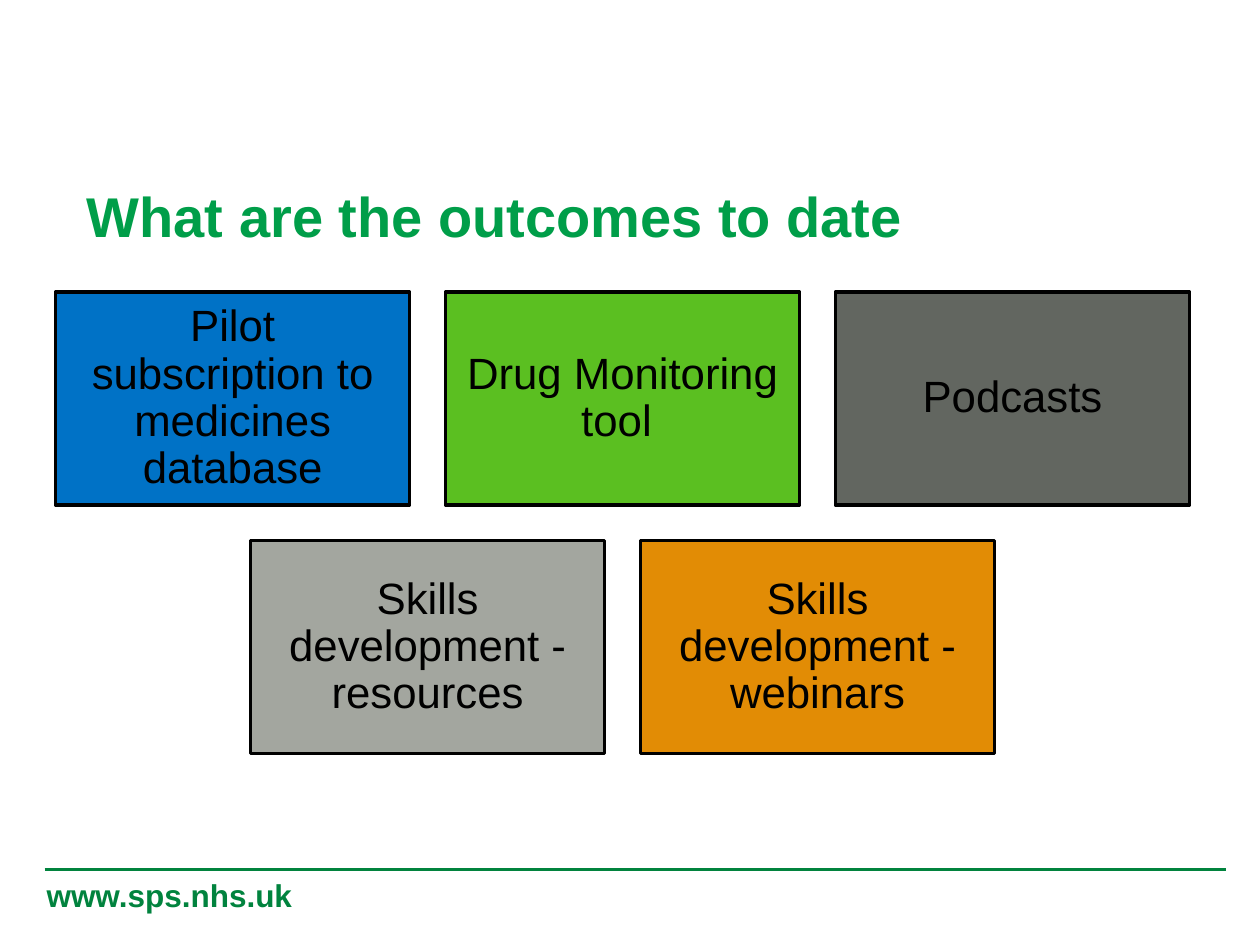
import pptx
import pptx.dml.color
import pptx.enum.shapes
import pptx.enum.text
import pptx.oxml
import pptx.util
from dataclasses import dataclass

Cm = pptx.util.Cm
Pt = pptx.util.Pt
ALIGN = pptx.enum.text.PP_ALIGN
ANCHOR = pptx.enum.text.MSO_ANCHOR


@dataclass(frozen=True)
class Theme:
    """Colours, font and type sizes of the slide."""
    font: str = "Arial"
    title: str = "009E49"
    footer: str = "01833E"
    ink: str = "000000"
    title_size: int = 32
    card_size: int = 25
    footer_size: int = 18


THEME = Theme()
CARD_WIDTH, CARD_HEIGHT, GAP = 7.14, 4.29, 0.72
CARDS_CENTRE, CARDS_TOP = 12.55, 5.89
OUTCOME_ROWS = [
    [("Pilot subscription to medicines database", "0072C6"),
     ("Drug Monitoring tool ", "5BBF21"),
     ("Podcasts", "626660")],
    [("Skills development - resources", "A3A69F"),
     ("Skills development - webinars", "E28C05")],
]


def rgb(value):
    """Turn a hex string into a colour."""
    return pptx.dml.color.RGBColor.from_string(value)


def apply(target, formats):
    """Set every attribute named in a dict of format values."""
    for name, value in formats.items():
        setattr(target, name, value)


def write(shape, text, size, colour, bold=False, align=ALIGN.LEFT,
          anchor=ANCHOR.MIDDLE, spacing=1.0):
    """Put one formatted paragraph into a shape."""
    frame = shape.text_frame
    inset = Cm(0.25)
    apply(frame, {"text": text, "word_wrap": True, "vertical_anchor": anchor,
                  "auto_size": pptx.enum.text.MSO_AUTO_SIZE.NONE,
                  "margin_left": inset, "margin_right": inset})
    paragraph = frame.paragraphs[0]
    apply(paragraph, {"alignment": align, "line_spacing": spacing})
    font = paragraph.runs[0].font
    apply(font, {"name": THEME.font, "size": Pt(size), "bold": bold})
    font.color.rgb = rgb(colour)


def add_title(slide, text):
    """Place and format the title placeholder."""
    title = slide.shapes.title
    apply(title, {"left": Cm(1.5), "top": Cm(3.53),
                  "width": Cm(22.86), "height": Cm(1.63)})
    write(title, text, THEME.title_size, THEME.title, bold=True)


def add_card(slide, left, top, text, fill):
    """Draw one outcome card."""
    card = slide.shapes.add_shape(
        pptx.enum.shapes.MSO_SHAPE.RECTANGLE,
        Cm(left), Cm(top), Cm(CARD_WIDTH), Cm(CARD_HEIGHT))
    card.shadow.inherit = False
    card.fill.solid()
    card.fill.fore_color.rgb = rgb(fill)
    card.line.color.rgb = rgb(THEME.ink)
    card.line.width = Pt(2)
    write(card, text, THEME.card_size, THEME.ink,
          align=ALIGN.CENTER, spacing=0.9)


def add_card_rows(slide, rows):
    """Lay out the outcome cards in centred rows."""
    for row_index, outcomes in enumerate(rows):
        row_width = len(outcomes) * (CARD_WIDTH + GAP) - GAP
        row_left = CARDS_CENTRE - row_width / 2
        top = CARDS_TOP + row_index * (CARD_HEIGHT + GAP)
        for column, (text, fill) in enumerate(outcomes):
            add_card(slide, row_left + column * (CARD_WIDTH + GAP), top,
                     text, fill)


def add_footer(slide, address):
    """Draw the footer rule with the web address below it."""
    rule = slide.shapes.add_connector(
        pptx.enum.shapes.MSO_CONNECTOR.STRAIGHT,
        Cm(0.9), Cm(17.53), Cm(24.71), Cm(17.53))
    rule.line.color.rgb = rgb(THEME.footer)
    rule.line.width = Pt(1.5)
    rule._element.spPr.append(pptx.oxml.parse_xml(
        '<a:effectLst xmlns:a='
        '"http://schemas.openxmlformats.org/drawingml/2006/main"/>'))
    website = slide.shapes.add_textbox(Cm(0.69), Cm(17.53), Cm(11.2), Cm(1.02))
    write(website, address, THEME.footer_size, THEME.footer, bold=True,
          anchor=ANCHOR.TOP)


def main():
    """Build and save the slide."""
    deck = pptx.Presentation()
    apply(deck, {"slide_width": Cm(25.4), "slide_height": Cm(19.05)})
    slide = deck.slides.add_slide(deck.slide_layouts.get_by_name("Title Only"))
    add_footer(slide, "www.sps.nhs.uk")
    add_title(slide, "What are the outcomes to date")
    add_card_rows(slide, OUTCOME_ROWS)
    deck.save("out.pptx")


if __name__ == "__main__":
    main()
